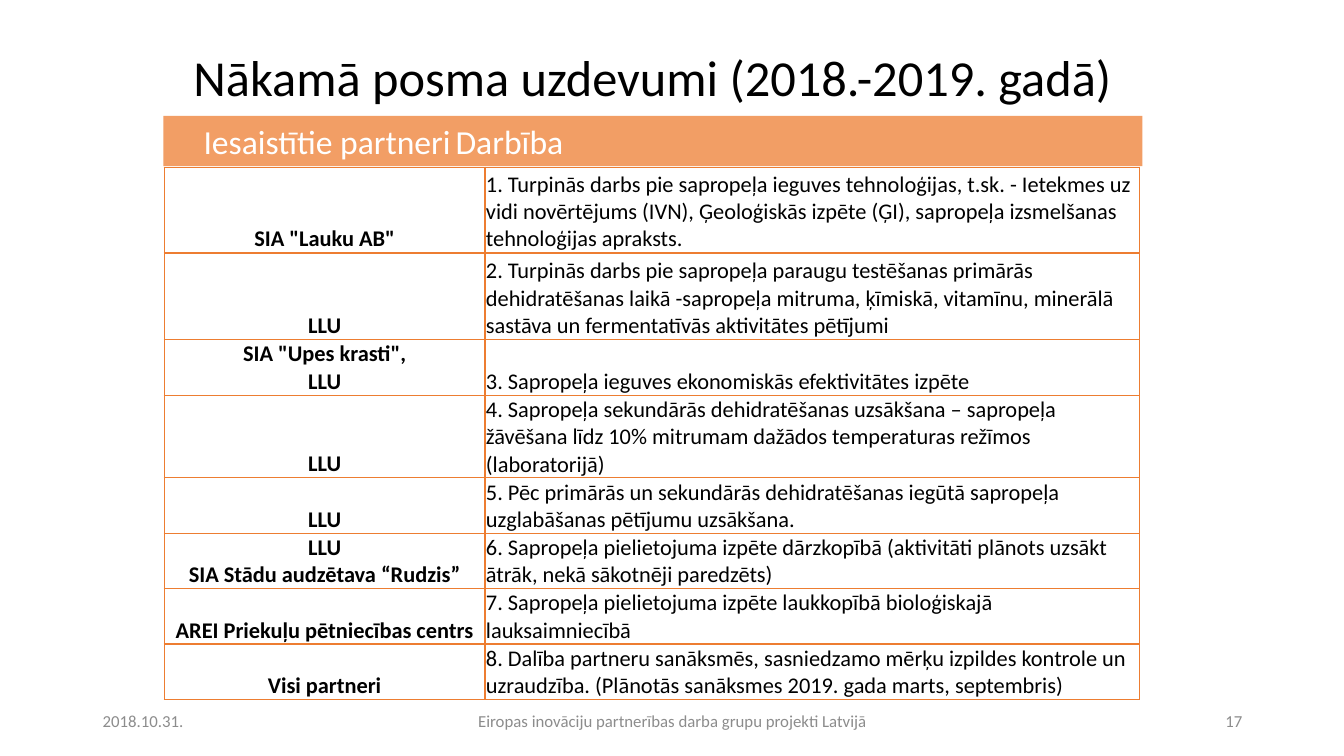
import pptx
import pptx.dml.color
import pptx.enum.shapes
import pptx.enum.text
import pptx.oxml.ns
import pptx.util
from lxml import etree

Inches = pptx.util.Inches
Pt = pptx.util.Pt
RGBColor = pptx.dml.color.RGBColor
ALIGN = pptx.enum.text.PP_ALIGN
ANCHOR = pptx.enum.text.MSO_ANCHOR
qn = pptx.oxml.ns.qn

BLACK = RGBColor(0x00, 0x00, 0x00)
WHITE = RGBColor(0xFF, 0xFF, 0xFF)
GREY = RGBColor(0x8C, 0x8C, 0x8C)
PEACH = RGBColor(0xF2, 0x9E, 0x65)
ORANGE = RGBColor(0xED, 0x7D, 0x31)
FONT = "Calibri"

TITLE = "Nākamā posma uzdevumi (2018.-2019. gadā)"
HEADINGS = ("Iesaistītie partneri", "Darbība")
HEADING_INDENT = 0.3
HEADING_TAB = 5.84
COLUMN_WIDTHS = (3.18, 6.49)
TASKS = [
    (0.85, 'SIA "Lauku AB"',
     "1. Turpinās darbs pie sapropeļa ieguves tehnoloģijas, t.sk. - Ietekmes uz vidi novērtējums (IVN), "
     "Ģeoloģiskās izpēte (ĢI), sapropeļa izsmelšanas tehnoloģijas apraksts."),
    (0.86, "LLU",
     "2. Turpinās darbs pie sapropeļa paraugu testēšanas primārās dehidratēšanas laikā -sapropeļa mitruma, "
     "ķīmiskā, vitamīnu, minerālā sastāva un fermentatīvās aktivitātes pētījumi"),
    (0.55, 'SIA "Upes krasti",\vLLU',
     "3. Sapropeļa ieguves ekonomiskās efektivitātes izpēte"),
    (0.82, "LLU",
     "4. Sapropeļa sekundārās dehidratēšanas uzsākšana – sapropeļa žāvēšana līdz 10% mitrumam dažādos "
     "temperaturas režīmos (laboratorijā)"),
    (0.55, "LLU",
     "5. Pēc primārās un sekundārās dehidratēšanas iegūtā sapropeļa uzglabāšanas pētījumu uzsākšana."),
    (0.55, "LLU\vSIA Stādu audzētava “Rudzis”",
     "6. Sapropeļa pielietojuma izpēte dārzkopībā (aktivitāti plānots uzsākt ātrāk, nekā sākotnēji paredzēts)"),
    (0.55, "AREI Priekuļu pētniecības centrs",
     "7. Sapropeļa pielietojuma izpēte laukkopībā bioloģiskajā lauksaimniecībā"),
    (0.55, "Visi partneri",
     "8. Dalība partneru sanāksmēs, sasniedzamo mērķu izpildes kontrole un uzraudzība. "
     "(Plānotās sanāksmes 2019. gada marts, septembris)"),
]
FOOTERS = [
    (0.92, 3, ALIGN.LEFT, "2018.10.31."),
    (4.42, 4.5, ALIGN.CENTER, "Eiropas inovāciju partnerības darba grupu projekti Latvijā"),
    (9.42, 3, ALIGN.RIGHT, "17"),
]


def write(frame, text, size, color, align=ALIGN.LEFT, bold=False):
    frame.text = text
    para = frame.paragraphs[0]
    para.alignment = align
    for span in para.runs:
        span.font.name = FONT
        span.font.size = Pt(size)
        span.font.bold = bold
        span.font.color.rgb = color
    return para


def add_text(page, place, text, size, color, align=ALIGN.LEFT):
    box = page.shapes.add_textbox(*map(Inches, place))
    box.text_frame.word_wrap = True
    box.text_frame.vertical_anchor = ANCHOR.MIDDLE
    return write(box.text_frame, text, size, color, align)


def add_borders(cell):
    properties = cell._tc.get_or_add_tcPr()
    for side in ("lnL", "lnR", "lnT", "lnB"):
        line = etree.SubElement(properties, qn("a:" + side), w=str(Pt(1)))
        fill = etree.SubElement(line, qn("a:solidFill"))
        etree.SubElement(fill, qn("a:srgbClr"), val=str(ORANGE))


def add_tasks(page):
    heights = [task[0] for task in TASKS]
    table = page.shapes.add_table(
        len(TASKS), len(COLUMN_WIDTHS), Inches(1.63), Inches(1.66),
        Inches(sum(COLUMN_WIDTHS)), Inches(sum(heights))).table
    table.first_row = False
    table.horz_banding = False
    for column, width in zip(table.columns, COLUMN_WIDTHS):
        column.width = Inches(width)
    for row, (height, partner, activity) in zip(table.rows, TASKS):
        row.height = Inches(height)
        for cell in row.cells:
            cell.margin_left = cell.margin_right = cell.margin_top = Inches(0.01)
            cell.margin_bottom = 0
            cell.vertical_anchor = ANCHOR.BOTTOM
            add_borders(cell)
            cell.fill.background()
        write(row.cells[0].text_frame, partner, 16, BLACK, ALIGN.CENTER, True)
        write(row.cells[1].text_frame, activity, 16, BLACK)


def add_heading_bar(page):
    bar = page.shapes.add_shape(
        pptx.enum.shapes.MSO_SHAPE.RECTANGLE,
        Inches(1.62), Inches(1.15), Inches(9.71), Inches(0.5))
    bar.shadow.inherit = False
    bar.fill.solid()
    bar.fill.fore_color.rgb = PEACH
    bar.line.fill.background()
    bar.text_frame.word_wrap = True
    bar.text_frame.vertical_anchor = ANCHOR.TOP
    para = write(bar.text_frame, "\t".join(HEADINGS), 24, WHITE)
    properties = para._p.get_or_add_pPr()
    properties.set("marL", str(Inches(HEADING_INDENT)))
    properties.set("indent", "0")
    tabs = etree.SubElement(properties, qn("a:tabLst"))
    etree.SubElement(tabs, qn("a:tab"), pos=str(Inches(HEADING_TAB)), algn="l")


def main():
    deck = pptx.Presentation()
    deck.slide_width = Inches(13.33)
    deck.slide_height = Inches(7.5)
    page = deck.slides.add_slide(deck.slide_layouts[6])
    title = add_text(page, (1.82, 0.45, 9.51, 0.7), TITLE, 36, BLACK)
    title.line_spacing = 0.9
    add_tasks(page)
    add_heading_bar(page)
    for left, width, align, text in FOOTERS:
        add_text(page, (left, 6.95, width, 0.4), text, 12, GREY, align)
    deck.save("out.pptx")


if __name__ == "__main__":
    main()
